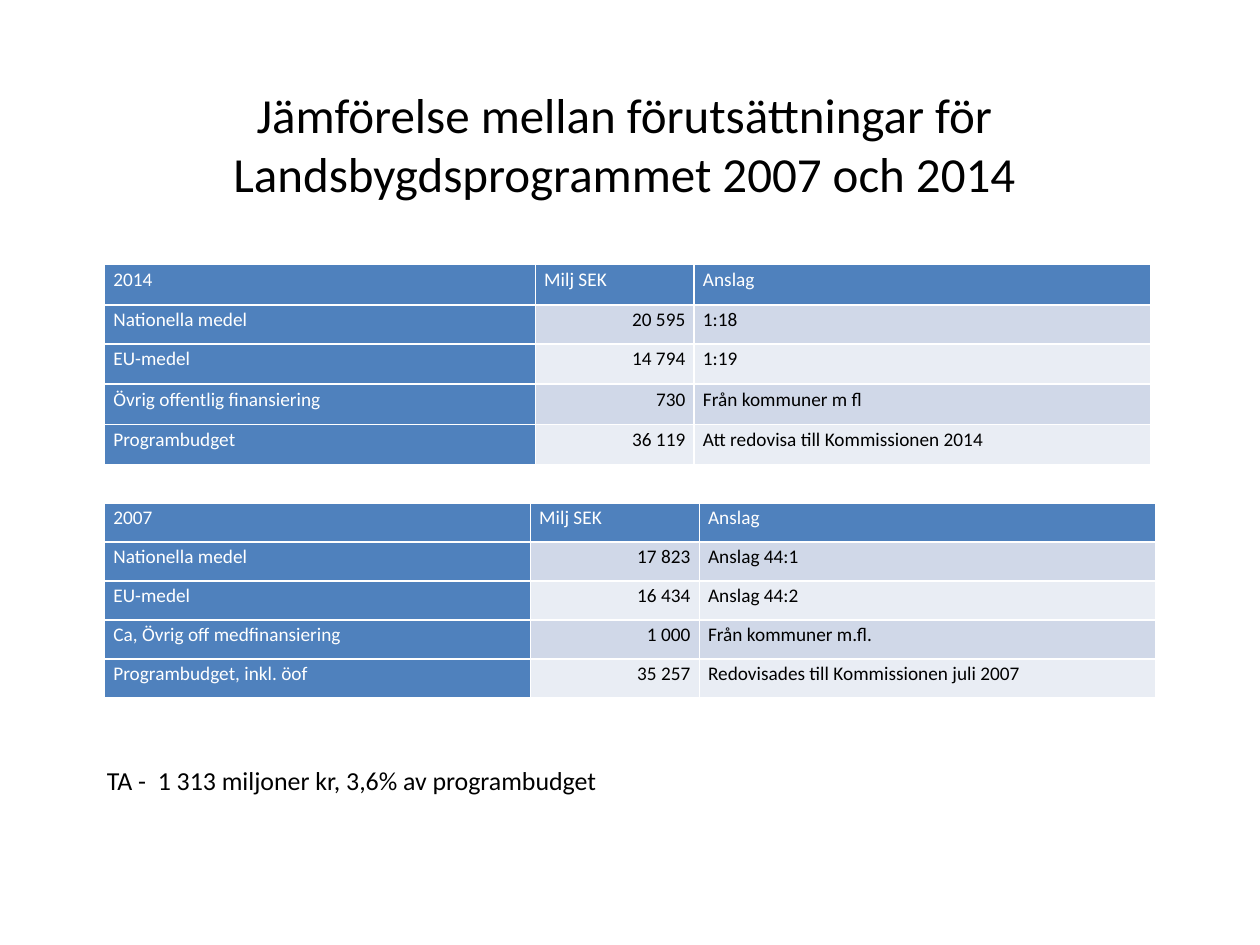
from lxml.etree import SubElement
from pptx import Presentation
from pptx.dml.color import RGBColor
from pptx.enum.text import MSO_ANCHOR, PP_ALIGN
from pptx.oxml.ns import qn
from pptx.util import Inches, Pt

BLUE = RGBColor(0x4F, 0x81, 0xBD)
BAND_DARK = RGBColor(0xD0, 0xD8, 0xE8)
BAND_LIGHT = RGBColor(0xE9, 0xED, 0xF4)
WHITE = RGBColor(0xFF, 0xFF, 0xFF)
BLACK = RGBColor(0, 0, 0)


def add_run(p, text, size, color):
    r = p.add_run()
    r.text = text
    r.font.name = "Calibri"
    r.font.size = Pt(size)
    r.font.color.rgb = color


def set_borders(cell, color, width):
    tcPr = cell._tc.get_or_add_tcPr()
    for side in ("lnL", "lnR", "lnT", "lnB"):
        ln = SubElement(tcPr, qn(f"a:{side}"), w=str(Pt(width)))
        fill = SubElement(ln, qn("a:solidFill"))
        SubElement(fill, qn("a:srgbClr"), val=str(color))


prs = Presentation()
prs.slide_width, prs.slide_height = Inches(10), Inches(7.5)
s = prs.slides.add_slide(prs.slide_layouts[5])

# Title
title = s.shapes.title
title.left, title.top = Inches(1.06), Inches(0.6)
title.width, title.height = Inches(7.79), Inches(1.08)
tf = title.text_frame
tf.word_wrap = True
tf.vertical_anchor = MSO_ANCHOR.MIDDLE
p = tf.paragraphs[0]
p.alignment = PP_ALIGN.CENTER
add_run(p, "Jämförelse mellan förutsättningar för Landsbygdsprogrammet 2007 och 2014", 28, BLACK)

# Budget tables: top, column widths, row heights, rows
budgets = [
    (2.1, (3.42, 1.26, 3.62), (0.32, 0.31, 0.32, 0.32, 0.32), [
        ("2014", "Milj SEK", "Anslag"),
        ("Nationella medel", "20 595", "1:18"),
        ("EU-medel", "14 794", "1:19"),
        ("Övrig offentlig finansiering", "730", "Från kommuner m fl"),
        ("Programbudget", "36 119", "Att redovisa till Kommissionen 2014"),
    ]),
    (3.99, (3.38, 1.34, 3.62), (0.31,) * 5, [
        ("2007", "Milj SEK", "Anslag"),
        ("Nationella medel", "17 823", "Anslag 44:1"),
        ("EU-medel", "16 434", "Anslag 44:2"),
        ("Ca, Övrig off medfinansiering", "1 000", "Från kommuner m.fl."),
        ("Programbudget, inkl. öof", "35 257", "Redovisades till Kommissionen juli 2007"),
    ]),
]
for top, widths, heights, rows in budgets:
    table = s.shapes.add_table(len(rows), len(widths), Inches(0.83), Inches(top),
                               Inches(sum(widths)), Inches(sum(heights))).table
    table.first_col = True
    for col, width in zip(table.columns, widths):
        col.width = Inches(width)
    for i, values in enumerate(rows):
        table.rows[i].height = Inches(heights[i])
        for j, value in enumerate(values):
            cell = table.cell(i, j)
            heading = i == 0 or j == 0
            cell.margin_left = cell.margin_right = Inches(0.07)
            cell.margin_top = cell.margin_bottom = 0
            set_borders(cell, WHITE, 1)
            cell.fill.solid()
            band = BAND_DARK if i % 2 else BAND_LIGHT
            cell.fill.fore_color.rgb = BLUE if heading else band
            p = cell.text_frame.paragraphs[0]
            p.line_spacing = 1.15
            if j == 1 and not heading:
                p.alignment = PP_ALIGN.RIGHT
            add_run(p, value, 11, WHITE if heading else BLACK)

# Note below the tables
note = s.shapes.add_textbox(Inches(0.75), Inches(5.99), Inches(8.23), Inches(0.4))
tf = note.text_frame
tf.word_wrap = True
tf.vertical_anchor = MSO_ANCHOR.MIDDLE
add_run(tf.paragraphs[0], "TA -  1 313 miljoner kr, 3,6% av programbudget", 14.8, BLACK)

prs.save("out.pptx")
